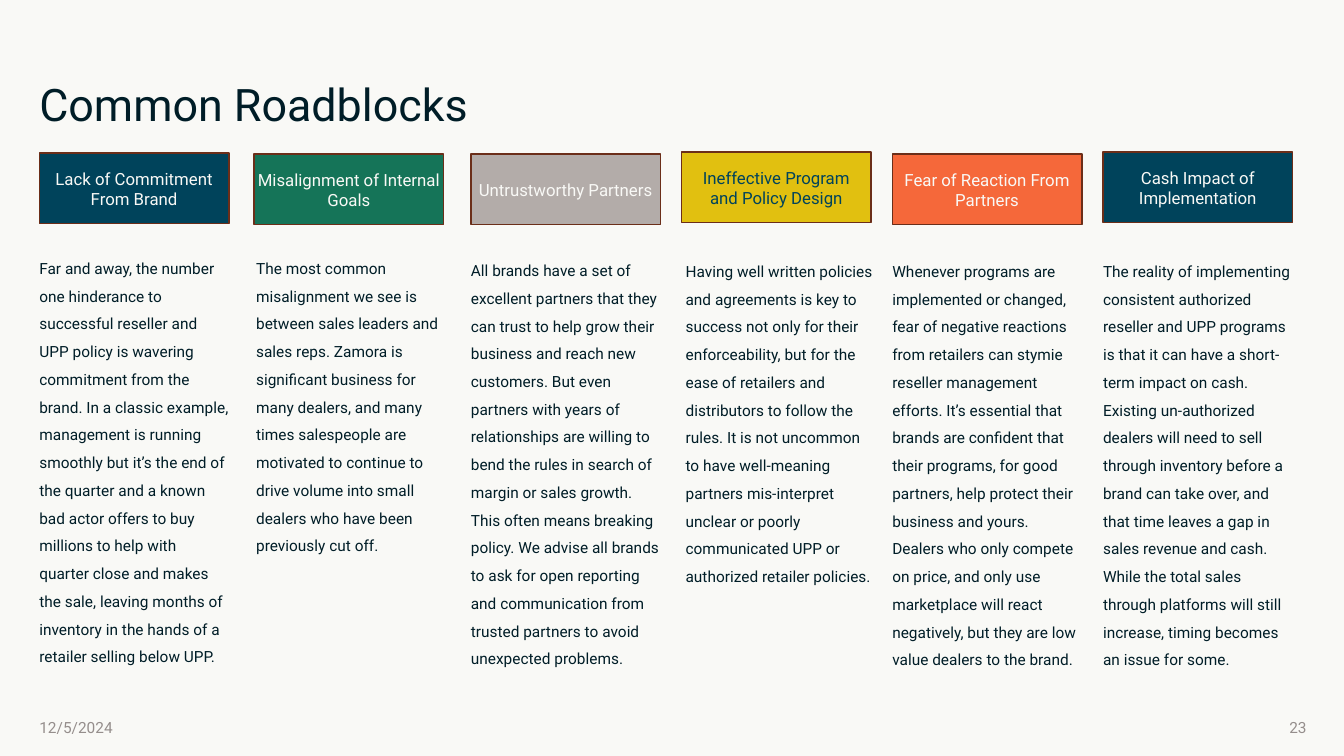
from collections import namedtuple

from pptx import Presentation
from pptx.dml.color import RGBColor
from pptx.enum.shapes import MSO_SHAPE
from pptx.enum.text import MSO_ANCHOR, PP_ALIGN
from pptx.util import Inches, Pt

FONT = "Roboto"
PAPER, INK, NAVY, GREY, RUST = "F9F9F6", "001D27", "00435B", "958E8C", "6B2E19"
MARGIN = 0.39
COLUMN_WIDTH, HEADER_HEIGHT, BODY_HEIGHT = 1.88, 0.7, 4.4

# left and top place the header; body_dx and body_top place the text below it
Roadblock = namedtuple("Roadblock", "left top body_dx body_top fill color title body")

ROADBLOCKS = [
    Roadblock(
        0.39, 1.52, 0, 2.43, NAVY, PAPER, "Lack of Commitment From Brand",
        "Far and away, the number one hinderance to successful reseller and UPP "
        "policy is wavering commitment from the brand. In a classic example, "
        "management is running smoothly but it’s the end of the quarter and a known "
        "bad actor offers to buy millions to help with quarter close and makes the "
        "sale, leaving months of inventory in the hands of a retailer selling below "
        "UPP."),
    Roadblock(
        2.52, 1.53, 0.02, 2.43, "157458", PAPER, "Misalignment of Internal Goals",
        "The most common misalignment we see is between sales leaders and sales "
        "reps. Zamora is significant business for many dealers, and many times "
        "salespeople are motivated to continue to drive volume into small dealers "
        "who have been previously cut off."),
    Roadblock(
        4.67, 1.53, 0, 2.45, "B3ACA9", PAPER, "Untrustworthy Partners",
        "All brands have a set of excellent partners that they can trust to help "
        "grow their business and reach new customers. But even partners with years "
        "of relationships are willing to bend the rules in search of margin or sales "
        "growth. This often means breaking policy. We advise all brands to ask for "
        "open reporting and communication from trusted partners to avoid unexpected "
        "problems."),
    Roadblock(
        6.76, 1.51, 0.04, 2.46, "E1C010", NAVY,
        "Ineffective Program\nand Policy Design",
        "Having well written policies and agreements is key to success not only for "
        "their enforceability, but for the ease of retailers and distributors to "
        "follow the rules. It is not uncommon to have well-meaning partners "
        "mis-interpret unclear or poorly communicated UPP or authorized retailer "
        "policies."),
    Roadblock(
        8.85, 1.53, 0, 2.46, "F5683A", PAPER, "Fear of Reaction From Partners",
        "Whenever programs are implemented or changed, fear of negative reactions "
        "from retailers can stymie reseller management efforts. It’s essential that "
        "brands are confident that their programs, for good partners, help protect "
        "their business and yours. Dealers who only compete on price, and only use "
        "marketplace will react negatively, but they are low value dealers to the "
        "brand."),
    Roadblock(
        10.94, 1.51, 0, 2.46, NAVY, PAPER, "Cash Impact of Implementation",
        "The reality of implementing consistent authorized reseller and UPP programs "
        "is that it can have a short-term impact on cash. Existing un-authorized "
        "dealers will need to sell through inventory before a brand can take over, "
        "and that time leaves a gap in sales revenue and cash. While the total sales "
        "through platforms will still increase, timing becomes an issue for some."),
]


def rgb(hex_color):
    return RGBColor.from_string(hex_color)


def write(sp, text, size, color, align=PP_ALIGN.LEFT, anchor=MSO_ANCHOR.MIDDLE,
          line_spacing=1.0):
    """Fill a shape with one paragraph; a newline becomes a line break."""
    tf = sp.text_frame
    tf.word_wrap = True
    tf.vertical_anchor = anchor
    tf.margin_left = tf.margin_right = 0
    tf.margin_top = tf.margin_bottom = Inches(0.05)
    p = tf.paragraphs[0]
    p.alignment = align
    p.line_spacing = line_spacing
    for i, line in enumerate(text.split("\n")):
        if i:
            p.add_line_break()
        r = p.add_run()
        r.text = line
        r.font.name = FONT
        r.font.size = Pt(size)
        r.font.color.rgb = rgb(color)


def add_text(s, box, text, size, color, **layout):
    sp = s.shapes.add_textbox(*map(Inches, box))
    write(sp, text, size, color, **layout)


def add_header(s, box, text, fill, color):
    sp = s.shapes.add_shape(MSO_SHAPE.RECTANGLE, *map(Inches, box))
    sp.shadow.inherit = False
    sp.fill.solid()
    sp.fill.fore_color.rgb = rgb(fill)
    sp.line.color.rgb = rgb(RUST)
    sp.line.width = Pt(1)
    write(sp, text, 12, color, align=PP_ALIGN.CENTER)


def add_roadblock(s, block):
    add_header(s, (block.left, block.top, COLUMN_WIDTH, HEADER_HEIGHT),
               block.title, block.fill, block.color)
    add_text(s, (block.left + block.body_dx, block.body_top, COLUMN_WIDTH, BODY_HEIGHT),
             block.body, 11, INK, anchor=MSO_ANCHOR.TOP, line_spacing=1.5)


def add_footer(s, left, top, width, height):
    date_width, number_width = 1.3, 1.38
    add_text(s, (left, top, date_width, height), "12/5/2024", 11, GREY)
    add_text(s, (left + width - number_width, top, number_width, height), "23", 11,
             GREY, align=PP_ALIGN.RIGHT)


def main():
    prs = Presentation()
    prs.slide_width, prs.slide_height = Inches(13.33), Inches(7.5)
    s = prs.slides.add_slide(prs.slide_layouts[6])
    s.background.fill.solid()
    s.background.fill.fore_color.rgb = rgb(PAPER)

    add_text(s, (MARGIN, 0.33, 12.57, 1.02), "Common Roadblocks", 32, INK,
             anchor=MSO_ANCHOR.BOTTOM, line_spacing=0.9)
    for block in ROADBLOCKS:
        add_roadblock(s, block)
    add_footer(s, MARGIN, 7.07, 12.57, 0.29)
    prs.save("out.pptx")


if __name__ == "__main__":
    main()
